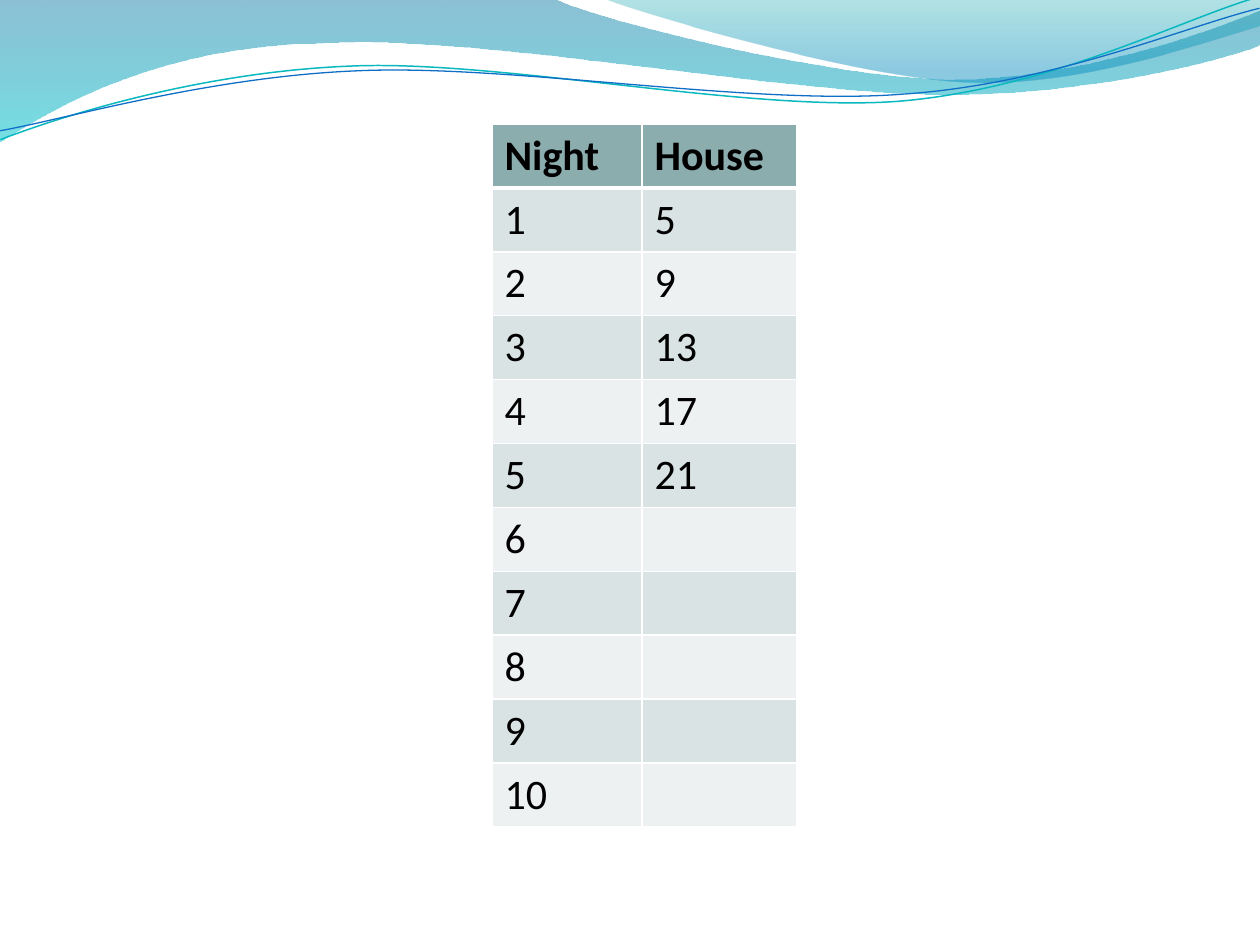
import pptx
import pptx.dml.color
import pptx.oxml
import pptx.oxml.ns
import pptx.util

PX = 914400 / 126
TILT = 357.3
HOUSES = ["5", "9", "13", "17", "21"]

# Each wave is a start point followed by lines (2 numbers) and Bezier curves (6).
BAND = [(0, 0), (554, -1), (600, 21, 837, 79, 955, 79),
        (1074, 79, 1207, 33, 1260, 11), (1261, 45),
        (1239, 55, 1096, 96, 940, 94), (784, 94, 481, 35, 324, 43),
        (163, 45, 58, 105, -1, 142), (0, 0)]
CREST = [(604, -1), (641, 14, 859, 78, 969, 82),
         (1079, 87, 1211, 40, 1260, 26), (1260, 0), (604, -1)]
# The strands are level here and tilted when drawn.
TEAL = [(-2, 110), (58, 90, 199, 52, 350, 53),
        (499, 53, 745, 118, 896, 114), (1048, 109, 1184, 45, 1260, 27)]
BLUE = [(-2, 101), (57, 94, 207, 57, 357, 58),
        (509, 58, 750, 112, 902, 107), (1052, 104, 1189, 52, 1262, 38)]


def px(n):
    return pptx.util.Emu(round(n * PX))


def rgb(text):
    return pptx.dml.color.RGBColor.from_string(text)


def node(text):
    """Parse one element, adding the drawing namespace to its tag."""
    space = pptx.oxml.ns.nsdecls("a")
    return pptx.oxml.parse_xml(text.replace(" ", f" {space} ", 1))


def outline(shapes, parts, close):
    """Draw a path through all points, then bend its curved parts."""
    pts = [part[i:i + 2] for part in parts for i in range(0, len(part), 2)]
    pen = shapes.build_freeform(*pts[0], scale=PX)
    pen.add_line_segments(pts[1:], close=close)
    shape = pen.convert_to_shape()
    shape.shadow.inherit = False
    legs = iter(list(shape._element.iter(pptx.oxml.ns.qn("a:lnTo"))))
    for part in parts[1:]:
        leg = next(legs)
        if len(part) == 6:
            curve = node('<a:cubicBezTo />')
            leg.addprevious(curve)
            for bit in (leg, next(legs), next(legs)):
                curve.append(bit[0])
                bit.getparent().remove(bit)
    return shape


def wave(shapes, parts, stops):
    """Draw a closed wave; stops are (position, colour, opacity percent)."""
    shape = outline(shapes, parts, True)
    shape.line.fill.background()
    shape.fill.gradient()
    shape.fill.gradient_angle = 270
    for stop, (pos, color, alpha) in zip(shape.fill.gradient_stops, stops):
        stop.position = pos
        stop.color.rgb = rgb(color)
    tags = list(shape._element.spPr.iter(pptx.oxml.ns.qn("a:srgbClr")))
    for tag, (pos, color, alpha) in zip(tags, stops):
        tag.append(node(f'<a:alpha val="{alpha * 1000}"/>'))


def strand(shapes, parts, color, width):
    shape = outline(shapes, parts, False)
    shape.rotation = TILT
    shape.fill.background()
    shape.line.color.rgb = rgb(color)
    shape.line.width = pptx.util.Pt(width)


def border(cell, side, width):
    cell._tc.get_or_add_tcPr().append(node(
        f'<a:ln{side} w="{width * 12700}"><a:solidFill>'
        f'<a:srgbClr val="FFFFFF"/></a:solidFill></a:ln{side}>'))


def style(cell, row):
    for side in "LRTB":
        thick = (row, side) in ((0, "B"), (1, "T"))
        border(cell, side, 3 if thick else 1)
    cell.fill.solid()
    band = "DAE3E3" if row % 2 else "EEF1F2"
    cell.fill.fore_color.rgb = rgb(band if row else "8CADAE")
    for run in cell.text_frame.paragraphs[0].runs:
        run.font.name = "Calibri"
        run.font.size = pptx.util.Pt(24)
        run.font.bold = row == 0
        run.font.color.rgb = rgb("000000")


def grid(shapes, rows, left, top, widths, height):
    table = shapes.add_table(
        len(rows), len(widths), px(left), px(top),
        px(sum(widths)), px(height * len(rows))).table
    for col, width in zip(table.columns, widths):
        col.width = px(width)
    for r, texts in enumerate(rows):
        table.rows[r].height = px(height)
        for c, text in enumerate(texts):
            cell = table.cell(r, c)
            if text:
                cell.text_frame.text = text
            style(cell, r)


def main():
    deck = pptx.Presentation()
    deck.slide_width, deck.slide_height = px(1260), px(945)
    shapes = deck.slides.add_slide(deck.slide_layouts[6]).shapes
    wave(shapes, BAND, [(0, "0074A1", 45), (1, "00C6CF", 55)])
    wave(shapes, CREST, [(0, "00A1A9", 30), (0.8, "008BBF", 45)])
    pair = shapes.add_group_shape().shapes
    strand(pair, TEAL, "0AB8BF", 0.85)
    strand(pair, BLUE, "0F6FC6", 0.75)
    blanks = [""] * (10 - len(HOUSES))
    rows = [("Night", "House")]
    rows += [(str(n), house) for n, house in enumerate(HOUSES + blanks, 1)]
    grid(shapes, rows, 492, 124, (150, 155), 63)
    deck.save("out.pptx")


if __name__ == "__main__":
    main()
